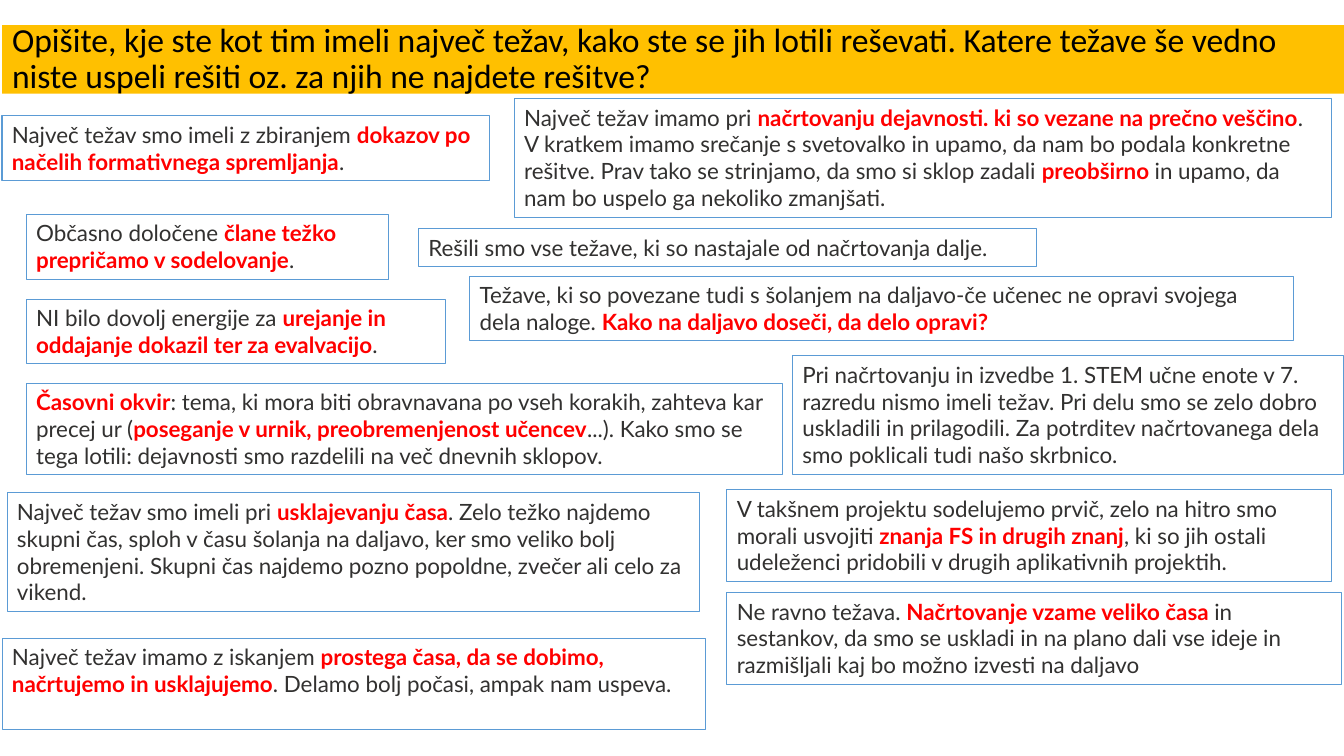
from pptx import Presentation
from pptx.dml.color import RGBColor
from pptx.enum.text import MSO_ANCHOR, MSO_AUTO_SIZE, PP_ALIGN
from pptx.util import Inches, Pt

MIDDLE = MSO_ANCHOR.MIDDLE
NO_AUTOFIT = MSO_AUTO_SIZE.NONE
LEFT = PP_ALIGN.LEFT

AMBER = RGBColor(0xFF, 0xC0, 0x00)
BLACK = RGBColor(0x00, 0x00, 0x00)
BLUE = RGBColor(0x5B, 0x9B, 0xD5)
GREY = RGBColor(0x32, 0x31, 0x30)
RED = RGBColor(0xFF, 0x00, 0x00)
WHITE = RGBColor(0xFF, 0xFF, 0xFF)

TITLE_FORMAT = {"name": "Calibri", "size": Pt(24), "bold": False}
PLAIN = {"name": "Lato", "size": Pt(16), "bold": False}
STRONG = {"name": "Lato", "size": Pt(16), "bold": True}

TITLE = ("Opišite, kje ste kot tim imeli največ težav, kako ste se jih lotili reševati. "
         "Katere težave še vedno niste uspeli rešiti oz. za njih ne najdete rešitve?")

# Left, top, width, height, fill and text; asterisks enclose the red words.
ANSWERS = [
    (0.02, 1.15, 4.84, 0.64, None,
     "Največ težav smo imeli z zbiranjem *dokazov po načelih formativnega spremljanja*."),
    (0.26, 2.13, 3.59, 0.64, None,
     "Občasno določene *člane težko prepričamo v sodelovanje*."),
    (5.1, 0.98, 8.11, 1.18, None,
     "Največ težav imamo pri *načrtovanju dejavnosti. ki so vezane na prečno veščino*. "
     "V kratkem imamo srečanje s svetovalko in upamo, da nam bo podala konkretne rešitve. "
     "Prav tako se strinjamo, da smo si sklop zadali *preobširno *in upamo, "
     "da nam bo uspelo ga nekoliko zmanjšati."),
    (4.15, 2.27, 6.13, 0.37, None,
     "Rešili smo vse težave, ki so nastajale od načrtovanja dalje."),
    (0.26, 2.97, 4.16, 0.64, None,
     "NI bilo dovolj energije za *urejanje in oddajanje dokazil ter za evalvacijo*."),
    (4.66, 2.74, 8.17, 0.64, None,
     "Težave, ki so povezane tudi s šolanjem na daljavo-če učenec ne opravi svojega "
     "dela naloge. *Kako na daljavo doseči, da delo opravi?*"),
    (0.26, 3.8, 7.5, 0.91, None,
     "*Časovni okvir*: tema, ki mora biti obravnavana po vseh korakih, zahteva kar "
     "precej ur (*poseganje v urnik, preobremenjenost učencev*...). Kako smo se tega "
     "lotili: dejavnosti smo razdelili na več dnevnih sklopov."),
    (7.86, 3.53, 5.47, 1.18, None,
     "Pri načrtovanju in izvedbe 1. STEM učne enote v 7. razredu nismo imeli težav. "
     "Pri delu smo se zelo dobro uskladili in prilagodili. Za potrditev načrtovanega "
     "dela smo poklicali tudi našo skrbnico."),
    (0.07, 4.89, 6.87, 1.18, None,
     "Največ težav smo imeli pri *usklajevanju časa*. Zelo težko najdemo skupni čas, "
     "sploh v času šolanja na daljavo, ker smo veliko bolj obremenjeni. Skupni čas "
     "najdemo pozno popoldne, zvečer ali celo za vikend."),
    (7.21, 4.86, 6, 0.91, None,
     "V takšnem projektu sodelujemo prvič, zelo na hitro smo morali usvojiti "
     "*znanja FS in drugih znanj*, ki so jih ostali udeleženci pridobili v drugih "
     "aplikativnih projektih."),
    (0.02, 6.33, 6.98, 0.91, WHITE,
     "Največ težav imamo z iskanjem *prostega časa, da se dobimo, načrtujemo in "
     "usklajujemo*. Delamo bolj počasi, ampak nam uspeva."),
    (7.21, 5.88, 6.1, 0.91, WHITE,
     "Ne ravno težava. *Načrtovanje vzame veliko časa *in sestankov, da smo se uskladi "
     "in na plano dali vse ideje in razmišljali kaj bo možno izvesti na daljavo"),
]


def add_run(p, text, formats, color):
    r = p.add_run()
    r.text = text
    for name, value in formats.items():
        setattr(r.font, name, value)
    r.font.color.rgb = color


def set_title(s):
    sp = s.shapes.title
    sp.left, sp.top = Inches(0.02), Inches(0.25)
    sp.width, sp.height = Inches(13.31), Inches(0.68)
    sp.fill.solid()
    sp.fill.fore_color.rgb = AMBER
    tf = sp.text_frame
    tf.word_wrap = True
    tf.auto_size = NO_AUTOFIT
    tf.vertical_anchor = MIDDLE
    p = tf.paragraphs[0]
    p.alignment = LEFT
    p.line_spacing = 0.9
    add_run(p, TITLE, TITLE_FORMAT, BLACK)


def add_answer(s, left, top, width, height, fill, text):
    sp = s.shapes.add_textbox(Inches(left), Inches(top), Inches(width), Inches(height))
    sp.line.color.rgb = BLUE
    sp.line.width = Pt(0.75)
    if fill is not None:
        sp.fill.solid()
        sp.fill.fore_color.rgb = fill
    tf = sp.text_frame
    tf.word_wrap = True
    tf.auto_size = NO_AUTOFIT
    for i, part in enumerate(text.split("*")):
        if part:
            formats, color = (STRONG, RED) if i % 2 else (PLAIN, GREY)
            add_run(tf.paragraphs[0], part, formats, color)


def main():
    prs = Presentation()
    prs.slide_width, prs.slide_height = Inches(13.33), Inches(7.5)
    s = prs.slides.add_slide(prs.slide_layouts.get_by_name("Title Only"))
    set_title(s)
    for answer in ANSWERS:
        add_answer(s, *answer)
    prs.save("out.pptx")


if __name__ == "__main__":
    main()
